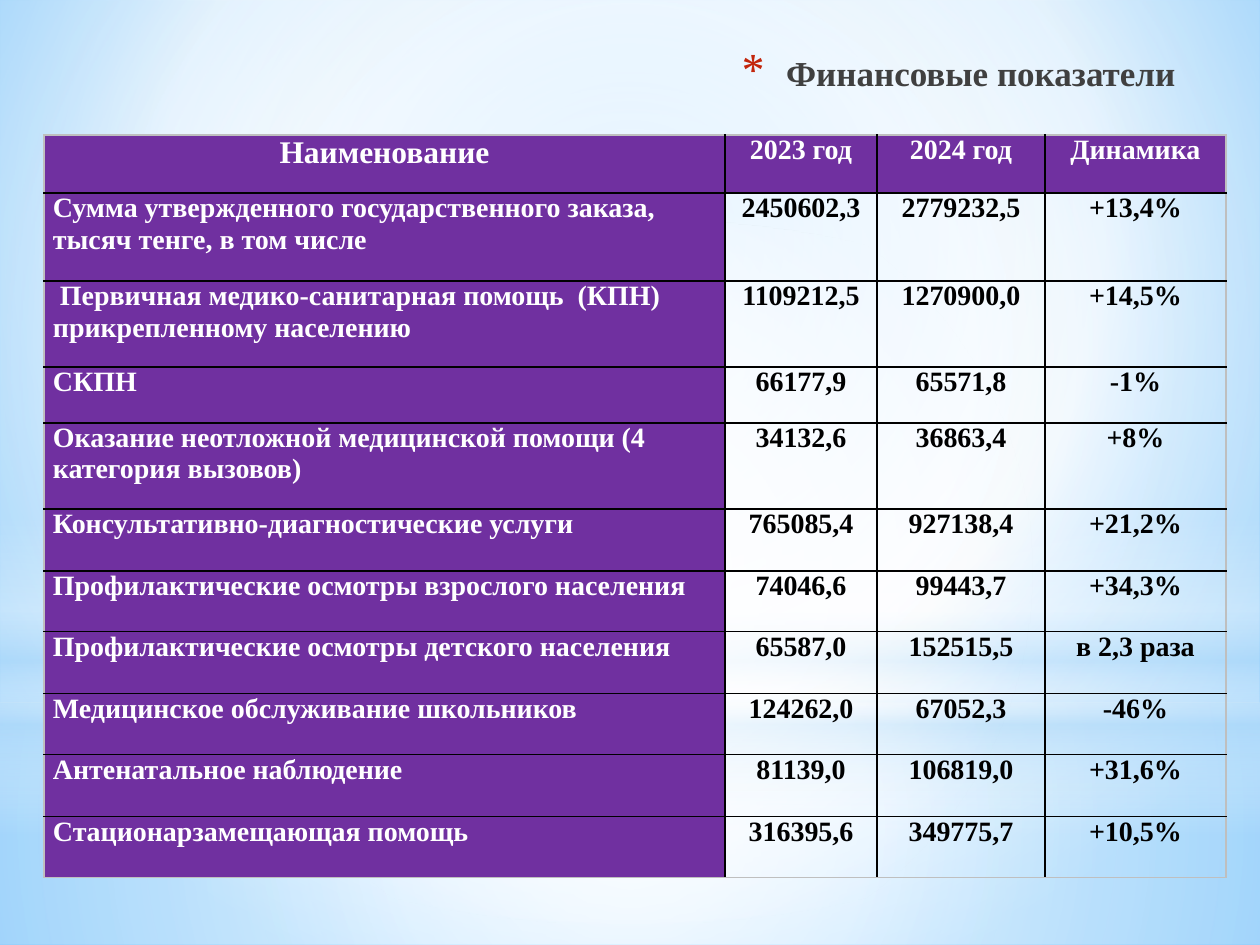
from lxml import etree
from pptx import Presentation
from pptx import util as u
from pptx.dml.color import RGBColor
from pptx.enum import shapes, text
from pptx.oxml.ns import qn

SCALE = 914400 / 126
WHITE, BLACK, PURPLE = "FFFFFF", "000000", "7030A0"
GREY, SKY, RED = "BFBFBF", "B4DCFA", "C3260C"

HEADER = ["Наименование", "2023 год", "2024 год", "Динамика"]
INDICATORS = [
    ["Сумма утвержденного государственного заказа, тысяч тенге, в том числе",
     "2450602,3", "2779232,5", "+13,4%"],
    [" Первичная медико-санитарная помощь  (КПН) прикрепленному населению",
     "1109212,5", "1270900,0", "+14,5%"],
    ["СКПН", "66177,9", "65571,8", "-1%"],
    ["Оказание неотложной медицинской помощи (4 категория вызовов)",
     "34132,6", "36863,4", "+8%"],
    ["Консультативно-диагностические услуги", "765085,4", "927138,4", "+21,2%"],
    ["Профилактические осмотры взрослого населения", "74046,6", "99443,7", "+34,3%"],
    ["Профилактические осмотры детского населения", "65587,0", "152515,5", "в 2,3 раза"],
    ["Медицинское обслуживание школьников", "124262,0", "67052,3", "-46%"],
    ["Антенатальное наблюдение", "81139,0", "106819,0", "+31,6%"],
    ["Стационарзамещающая помощь", "316395,6", "349775,7", "+10,5%"],
]
COLUMN_WIDTHS = [681, 152, 168, 181]
ROW_HEIGHTS = [58, 88, 86, 56, 86] + [62, 61] * 3


def px(length):
    return u.Emu(round(length * SCALE))


def colour(value):
    return RGBColor.from_string(value)


def add(parent, tag, **attributes):
    values = {name: str(value) for name, value in attributes.items()}
    return etree.SubElement(parent, qn(tag), values)


class Slide:
    font = "Times New Roman"

    def __init__(self, deck):
        self.page = deck.slides.add_slide(deck.slide_layouts[5])

    def gradient(self, fill, element, stops, focus=None):
        fill.gradient()
        gradient = element.find(".//" + qn("a:gradFill"))
        for child in list(gradient):
            gradient.remove(child)
        stop_list = add(gradient, "a:gsLst")
        for position, value, opacity in stops:
            stop = add(stop_list, "a:gs", pos=position * 1000)
            tint = add(stop, "a:srgbClr", val=value)
            if opacity < 100:
                add(tint, "a:alpha", val=opacity * 1000)
        if focus:
            circle = add(gradient, "a:path", path="circle")
            sides = {side: part * 1000 for side, part in zip("ltrb", focus)}
            add(circle, "a:fillToRect", **sides)
        else:
            add(gradient, "a:lin", ang=90 * 60000, scaled=0)

    def background(self, stops, focus):
        self.gradient(self.page.background.fill, self.page.element, stops, focus)

    def glow(self, kind, left, top, width, height, stops, focus=None):
        shape = self.page.shapes.add_shape(
            kind, px(left), px(top), px(width), px(height))
        shape.shadow.inherit = False
        self.gradient(shape.fill, shape.element, stops, focus)
        shape.line.fill.background()

    def label(self, frame, words, size, value, align):
        para = frame.paragraphs[0]
        para.text = words
        para.alignment = align
        para.font.name = self.font
        para.font.size = u.Pt(size)
        para.font.bold = True
        para.font.color.rgb = colour(value)
        return para

    def title(self, words, left, top, width, height):
        box = self.page.shapes.title
        box.left, box.top, box.width, box.height = map(px, (left, top, width, height))
        frame = box.text_frame
        frame.auto_size = text.MSO_AUTO_SIZE.NONE
        frame.vertical_anchor = text.MSO_ANCHOR.MIDDLE
        para = self.label(frame, words, 20, "404040", text.PP_ALIGN.RIGHT)
        bullet = etree.Element("bullet")
        add(add(bullet, "a:buClr"), "a:srgbClr", val=RED)
        add(bullet, "a:buSzPct", val=128000)
        add(bullet, "a:buFont", typeface="Georgia")
        add(bullet, "a:buChar", char="*")
        properties = para.font._element.getparent()
        properties.set("marL", str(px(44)))
        properties.set("indent", str(px(-44)))
        for index, part in enumerate(list(bullet)):
            properties.insert(index, part)
        box.element.getparent().append(box.element)

    def borders(self, cell, edges):
        properties = cell._tc.get_or_add_tcPr()
        for index, (tag, value) in enumerate(edges.items()):
            line = etree.Element(qn(tag), w=str(u.Pt(1)))
            add(add(line, "a:solidFill"), "a:srgbClr", val=value)
            properties.insert(index, line)

    def table(self, rows, left, top, widths, heights):
        table = self.page.shapes.add_table(
            len(rows), len(widths), px(left), px(top),
            px(sum(widths)), px(sum(heights))).table
        for column, width in zip(table.columns, widths):
            column.width = px(width)
        for row, height in zip(table.rows, heights):
            row.height = px(height)
        last_row, last_column = len(rows) - 1, len(widths) - 1
        for r, values in enumerate(rows):
            for c, words in enumerate(values):
                cell = table.cell(r, c)
                cell.margin_left = cell.margin_right = px(9)
                cell.margin_top = cell.margin_bottom = 0
                heading = r == 0 or c == 0
                if heading:
                    cell.fill.solid()
                    cell.fill.fore_color.rgb = colour(PURPLE)
                else:
                    cell.fill.background()
                align = text.PP_ALIGN.LEFT if c == 0 and r else text.PP_ALIGN.CENTER
                self.label(cell.text_frame, words, 18 if r == c == 0 else 16,
                           WHITE if heading else BLACK, align)
                self.borders(cell, {
                    "a:lnL": GREY if c == 0 else BLACK,
                    "a:lnR": GREY if c == last_column else BLACK,
                    "a:lnT": GREY if r == 0 else BLACK,
                    "a:lnB": GREY if r == last_row else BLACK,
                })


def main():
    deck = Presentation()
    deck.slide_width, deck.slide_height = px(1260), px(945)
    slide = Slide(deck)
    rectangle, oval = shapes.MSO_SHAPE.RECTANGLE, shapes.MSO_SHAPE.OVAL
    centre = (50, 50, 50, 50)
    slide.background(
        [(0, "9ED5FF", 100), (60, WHITE, 100), (100, "5BB9FF", 100)], (20, 10, 20, 60))
    slide.glow(rectangle, 0, 703, 1260, 242,
               [(0, WHITE, 91), (37, WHITE, 76), (100, SKY, 79)], centre)
    slide.glow(rectangle, 0, 0, 1260, 703,
               [(0, WHITE, 89), (48, WHITE, 62), (100, SKY, 79)], centre)
    slide.glow(rectangle, 0, 519, 1260, 315,
               [(0, WHITE, 0), (29, WHITE, 30), (45, SKY, 40),
                (55, WHITE, 26), (65, SKY, 60), (100, WHITE, 0)])
    slide.glow(oval, 0, 220, 1260, 703, [(0, WHITE, 100), (56, WHITE, 0)], centre)
    slide.title("Финансовые показатели ", 63, 38, 1134, 68)
    slide.table([HEADER] + INDICATORS, 44, 135, COLUMN_WIDTHS, ROW_HEIGHTS)
    deck.save("out.pptx")


if __name__ == "__main__":
    main()
